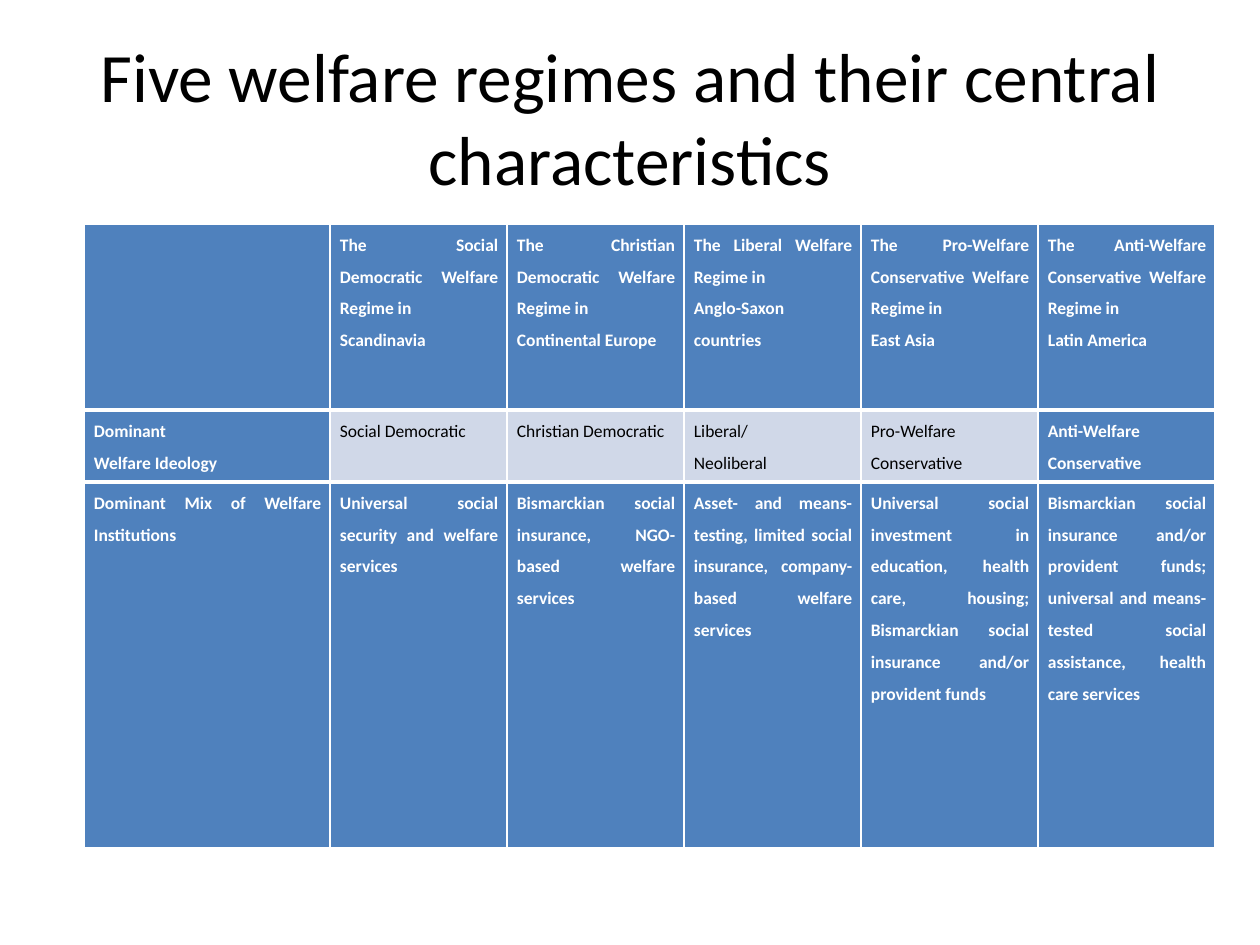
from copy import deepcopy
from lxml import etree
from pptx import Presentation
from pptx.dml.color import RGBColor
from pptx.enum.text import MSO_ANCHOR, MSO_AUTO_SIZE, PP_ALIGN
from pptx.oxml.ns import qn
from pptx.util import Emu, Pt

CENTER, JUSTIFY = PP_ALIGN.CENTER, PP_ALIGN.JUSTIFY
MIDDLE, NO_FIT = MSO_ANCHOR.MIDDLE, MSO_AUTO_SIZE.NONE
PX_PER_INCH = 126
FONT = "Calibri"
BLUE, PALE, WHITE, BLACK = "4F81BD", "D0D8E8", "FFFFFF", "000000"

# Content: each cell is a list of paragraphs
TITLE = "Five welfare regimes and their central characteristics"
ROWS = [
    [
        [],
        ["The Social Democratic Welfare Regime in", "Scandinavia"],
        ["The Christian Democratic Welfare Regime in", "Continental Europe"],
        ["The Liberal Welfare Regime in", "Anglo-Saxon countries"],
        ["The Pro-Welfare Conservative Welfare Regime in", "East Asia"],
        ["The Anti-Welfare Conservative Welfare Regime in", "Latin America"],
    ],
    [
        ["Dominant\nWelfare Ideology"],
        ["Social Democratic"],
        ["Christian Democratic"],
        ["Liberal/", "Neoliberal"],
        ["Pro-Welfare Conservative"],
        ["Anti-Welfare Conservative"],
    ],
    [
        ["Dominant Mix of Welfare Institutions"],
        ["Universal social security and welfare services"],
        ["Bismarckian social insurance, NGO-based welfare services"],
        ["Asset- and means-testing, limited social insurance, "
         "company-based welfare services"],
        ["Universal social investment in education, health care, housing; "
         "Bismarckian social insurance and/or provident funds"],
        ["Bismarckian social insurance and/or provident funds; universal and "
         "means-tested social assistance, health care services"],
    ],
]
PALE_CELLS = {(1, column) for column in range(1, 5)}

# Layout in px; the second row leaves room for descenders above its border
TITLE_BOX = (63, 38, 1134, 157)
TABLE_LEFT, TABLE_TOP = 84, 224
COLUMN_WIDTHS = [246] + [177] * 5
ROW_HEIGHTS = [186, 72, 366]
CELL_FORMAT = {"margin_left": 10, "margin_right": 9,
               "margin_top": 0, "margin_bottom": 0}


def px(length):
    return Emu(round(length * 914400 / PX_PER_INCH))


def color(code):
    return RGBColor.from_string(code)


def format_font(font, size, code, bold):
    for name, value in {"name": FONT, "size": Pt(size), "bold": bold}.items():
        setattr(font, name, value)
    font.color.rgb = color(code)


def add_border(cell, side, width):
    properties = cell._tc.get_or_add_tcPr()
    line = etree.SubElement(properties, qn(f"a:ln{side}"), w=str(Pt(width)))
    fill = etree.SubElement(line, qn("a:solidFill"))
    etree.SubElement(fill, qn("a:srgbClr"), val=WHITE)


def write_paragraph(para, text, code, bold):
    para.text = text
    para.alignment = JUSTIFY
    para.line_spacing = 1.5
    for span in para.runs:
        format_font(span.font, 10, code, bold)
    # Line breaks take the size of the text around them
    for line_break in para._p.findall(qn("a:br")):
        line_break.append(deepcopy(para.runs[0]._r.rPr))


def fill_cell(cell, row, column, paragraphs):
    pale = (row, column) in PALE_CELLS
    # The rules under the first two rows are thick
    widths = {"L": 1, "R": 1,
              "T": 3 if row > 0 else 1,
              "B": 3 if row < len(ROWS) - 1 else 1}
    for side, width in widths.items():
        add_border(cell, side, width)
    cell.fill.solid()
    cell.fill.fore_color.rgb = color(PALE if pale else BLUE)
    for name, length in CELL_FORMAT.items():
        setattr(cell, name, px(length))
    frame = cell.text_frame
    for index, text in enumerate(paragraphs):
        para = frame.add_paragraph() if index else frame.paragraphs[0]
        write_paragraph(para, text, BLACK if pale else WHITE, not pale)


def add_title(page):
    box = page.shapes.title
    for name, length in zip(("left", "top", "width", "height"), TITLE_BOX):
        setattr(box, name, px(length))
    frame = box.text_frame
    frame.text = TITLE
    for name, value in {"word_wrap": True, "auto_size": NO_FIT,
                        "vertical_anchor": MIDDLE}.items():
        setattr(frame, name, value)
    para = frame.paragraphs[0]
    para.alignment = CENTER
    format_font(para.runs[0].font, 39.6, BLACK, False)


def add_regime_table(page):
    table = page.shapes.add_table(
        len(ROWS), len(COLUMN_WIDTHS), px(TABLE_LEFT), px(TABLE_TOP),
        px(sum(COLUMN_WIDTHS)), px(sum(ROW_HEIGHTS))).table
    for column, width in zip(table.columns, COLUMN_WIDTHS):
        column.width = px(width)
    for row, height in zip(table.rows, ROW_HEIGHTS):
        row.height = px(height)
    for row, cells in enumerate(ROWS):
        for column, paragraphs in enumerate(cells):
            fill_cell(table.cell(row, column), row, column, paragraphs)


def main():
    deck = Presentation()
    deck.slide_width, deck.slide_height = px(1260), px(945)
    page = deck.slides.add_slide(deck.slide_layouts.get_by_name("Title Only"))
    add_title(page)
    add_regime_table(page)
    deck.save("out.pptx")


if __name__ == "__main__":
    main()
